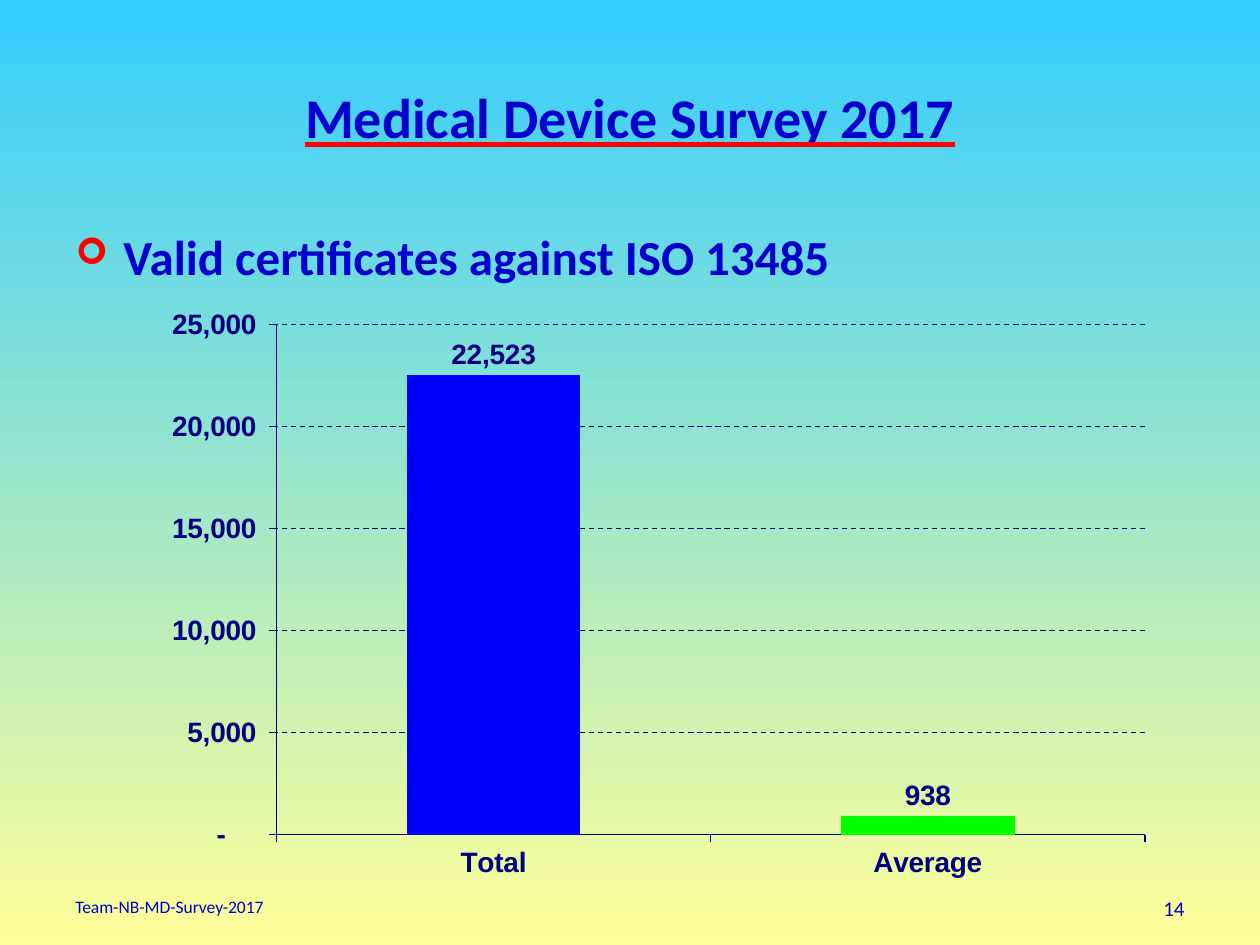
"""Build the survey slide on valid ISO 13485 certificates."""
from dataclasses import dataclass

from lxml.etree import SubElement
from pptx import Presentation
from pptx.chart.data import CategoryChartData
from pptx.dml.color import RGBColor
from pptx.enum.chart import XL_CHART_TYPE as ChartType
from pptx.enum.chart import XL_LABEL_POSITION as LabelPosition
from pptx.enum.chart import XL_TICK_MARK as TickMark
from pptx.enum.dml import MSO_LINE_DASH_STYLE as Dash
from pptx.enum.text import MSO_ANCHOR as Anchor
from pptx.enum.text import MSO_AUTO_SIZE as AutoSize
from pptx.enum.text import PP_ALIGN as Align
from pptx.oxml import parse_xml
from pptx.oxml.ns import nsdecls, qn
from pptx.util import Inches, Pt


@dataclass(frozen=True)
class Theme:
    font: str = "Calibri"
    chart_font: str = "Arial"
    text: str = "0000CC"
    accent: str = "FF0000"
    axis: str = "000080"
    series: str = "0070C0"
    sky: str = "33CCFF"
    sand: str = "FFFF99"
    title_size: int = 32
    body_size: int = 28
    chart_size: int = 16
    number_size: int = 12
    footer_size: int = 10


THEME = Theme()
TITLE = "Medical Device Survey 2017"
BULLET = "Valid certificates against ISO 13485"
FOOTER = "Team-NB-MD-Survey-2017"
PAGE_NUMBER = "14"
CERTIFICATES = [("Total", 22523, "0000FF"), ("Average", 938, "00FF00")]
NUMBER_FORMAT = '_ * #,##0_ ;_ * \\-#,##0_ ;_ * "-"??_ ;_ '

WIDTH, HEIGHT, MARGIN = 10, 7.5, 0.5
FULL = WIDTH - 2 * MARGIN
FOOT_TOP, FOOT_HEIGHT = 7.06, 0.29
NUMBER_WIDTH = 2.33
TITLE_AREA = (MARGIN, 0.3, FULL, 1.25)
BODY_AREA = (MARGIN, 1.75, FULL, 0.82)
FOOTER_AREA = (MARGIN, FOOT_TOP, 3.17, FOOT_HEIGHT)
NUMBER_AREA = (WIDTH - MARGIN - NUMBER_WIDTH, FOOT_TOP, NUMBER_WIDTH, FOOT_HEIGHT)
CHART_AREA = (1.14, 2.34, 8.11, 4.71)
PLOT_SHARES = {"x": 0.13, "y": 0.05, "w": 0.85, "h": 0.86}


def rgb(color):
    return RGBColor.from_string(color)


def style(font, size, color, name, bold=False):
    font.size, font.name, font.bold = Pt(size), name, bold
    font.color.rgb = rgb(color)


def write(box, area, text, size, align=Align.LEFT, anchor=Anchor.TOP, bold=False, bullet=None):
    box.left, box.top, box.width, box.height = map(Inches, area)
    frame = box.text_frame
    frame.word_wrap, frame.auto_size, frame.vertical_anchor = True, AutoSize.NONE, anchor
    para = frame.paragraphs[0]
    span = para.add_run()
    span.text = text
    para.alignment, para.space_before = align, Pt(0)
    if bullet:
        add_bullet(para, bullet)
    style(para.font, size, THEME.text, THEME.font, bold)
    return span


def add_bullet(para, symbol):
    properties = para._p.get_or_add_pPr()
    properties.set("marL", str(Inches(0.38)))
    properties.set("indent", str(-Inches(0.38)))
    color = SubElement(properties, qn("a:buClr"))
    SubElement(color, qn("a:srgbClr"), val=THEME.accent)
    SubElement(properties, qn("a:buSzPct"), val="75000")
    SubElement(properties, qn("a:buFont"), typeface="Wingdings")
    SubElement(properties, qn("a:buChar"), char=symbol)


def underline(span, color):
    span.font.underline = True
    span._r.get_or_add_rPr().append(parse_xml(
        f'<a:uFill {nsdecls("a")}><a:solidFill><a:srgbClr val="{color}"/></a:solidFill></a:uFill>'))


def paint_background(page):
    fill = page.background.fill
    fill.gradient()
    fill.gradient_angle = 270
    for stop, color in zip(fill.gradient_stops, (THEME.sky, THEME.sand)):
        stop.color.rgb = rgb(color)


def draw_line(line):
    line.color.rgb, line.width = rgb(THEME.axis), Pt(0.75)


def place_plot(chart):
    area = chart._chartSpace.chart.plotArea
    for layout in area.findall(qn("c:layout")):
        area.remove(layout)
    shares = "".join(f'<c:{key} val="{share}"/>' for key, share in PLOT_SHARES.items())
    area.insert(0, parse_xml(
        f'<c:layout {nsdecls("c")}><c:manualLayout><c:layoutTarget val="inner"/>'
        f'<c:xMode val="edge"/><c:yMode val="edge"/>{shares}</c:manualLayout></c:layout>'))


def add_certificate_chart(page):
    names, counts, colors = zip(*CERTIFICATES)
    data = CategoryChartData()
    data.categories = names
    data.add_series("Series 1", counts)
    chart = page.shapes.add_chart(
        ChartType.COLUMN_CLUSTERED, *map(Inches, CHART_AREA), data).chart
    chart.has_legend = chart.has_title = False
    style(chart.font, THEME.chart_size, THEME.axis, THEME.chart_font, True)
    for axis in (chart.category_axis, chart.value_axis):
        axis.major_tick_mark, axis.minor_tick_mark = TickMark.OUTSIDE, TickMark.NONE
        style(axis.tick_labels.font, THEME.chart_size, THEME.axis, THEME.chart_font, True)
        draw_line(axis.format.line)
    values = chart.value_axis
    values.minimum_scale, values.maximum_scale, values.major_unit = 0, 25000, 5000
    values.has_major_gridlines = True
    draw_line(values.major_gridlines.format.line)
    values.major_gridlines.format.line.dash_style = Dash.DASH
    plot = chart.plots[0]
    plot.gap_width, plot.vary_by_categories, plot.has_data_labels = 150, False, True
    labels = plot.data_labels
    labels.show_value, labels.position = True, LabelPosition.OUTSIDE_END
    style(labels.font, THEME.chart_size, THEME.axis, THEME.chart_font, True)
    for numbers in (values.tick_labels, labels):
        numbers.number_format, numbers.number_format_is_linked = NUMBER_FORMAT, False
    series = plot.series[0]
    series.format.fill.solid()
    series.format.fill.fore_color.rgb = rgb(THEME.series)
    for index, color in enumerate(colors):
        fill = series.points[index].format.fill
        fill.solid()
        fill.fore_color.rgb = rgb(color)
    place_plot(chart)


def main():
    deck = Presentation()
    deck.slide_width, deck.slide_height = Inches(WIDTH), Inches(HEIGHT)
    page = deck.slides.add_slide(deck.slide_layouts[1])
    paint_background(page)
    title, body = page.placeholders
    heading = write(title, TITLE_AREA, TITLE, THEME.title_size,
                    Align.CENTER, Anchor.MIDDLE, bold=True)
    underline(heading, THEME.accent)
    write(body, BODY_AREA, BULLET, THEME.body_size, bold=True, bullet="➢")
    for area, text, size, align in (
            (FOOTER_AREA, FOOTER, THEME.footer_size, Align.LEFT),
            (NUMBER_AREA, PAGE_NUMBER, THEME.number_size, Align.RIGHT)):
        write(page.shapes.add_textbox(*map(Inches, area)), area, text, size, align)
    add_certificate_chart(page)
    deck.save("out.pptx")


if __name__ == "__main__":
    main()
